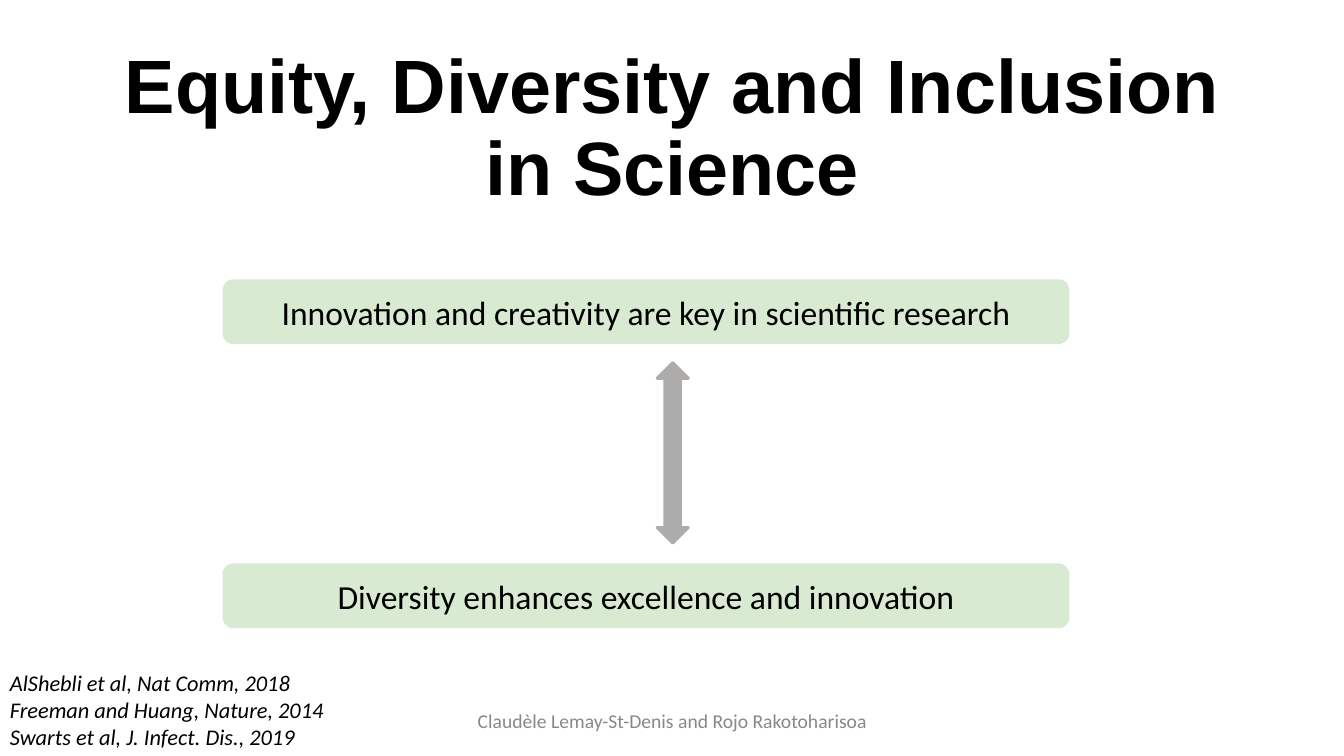
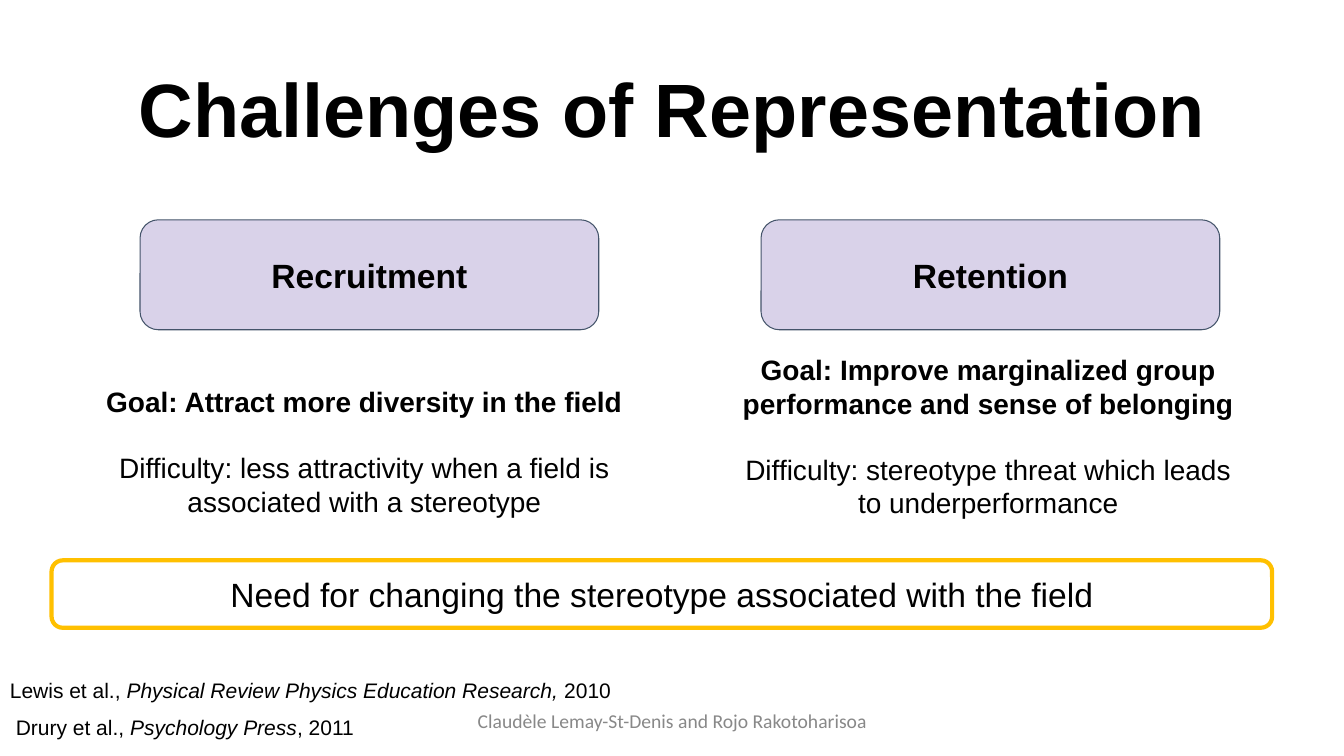
from dataclasses import dataclass, replace

from pptx import Presentation
from pptx.dml.color import RGBColor
from pptx.enum.shapes import MSO_SHAPE as Preset
from pptx.enum.text import MSO_ANCHOR as Anchor, MSO_AUTO_SIZE as AutoSize, PP_ALIGN as Align
from pptx.util import Cm, Pt


@dataclass(frozen=True)
class Style:
    size: float
    font: str = "Arial"
    color: str = "000000"
    bold: bool = False
    italic: bool = False
    align: Align = Align.CENTER
    spacing: float = 1.0
    gap: float = 0


@dataclass(frozen=True)
class Theme:
    green: str = "D9EAD3"
    lilac: str = "D9D2E9"
    slate: str = "44546A"
    amber: str = "FFC000"
    grey: str = "AEABAB"
    title: Style = Style(54, bold=True, spacing=0.9)
    statement: Style = Style(24, "Calibri")
    heading: Style = Style(24, bold=True)
    body: Style = Style(20, gap=23)
    conclusion: Style = Style(24)
    footer: Style = Style(14, "Calibri", "888888")
    citation: Style = Style(16, "Calibri", italic=True, align=Align.LEFT)
    reference: Style = Style(15, align=Align.LEFT, spacing=0.9, gap=10)


THEME = Theme()
FOOTER = "Claudèle Lemay-St-Denis and Rojo Rakotoharisoa"


def rgb(value):
    return RGBColor.from_string(value)


def format_para(para, style, first):
    para.alignment = style.align
    para.line_spacing = style.spacing
    para.space_before = Pt(0 if first else style.gap)
    font = para.font
    font.size, font.name = Pt(style.size), style.font
    font.bold, font.italic = style.bold, style.italic
    font.color.rgb = rgb(style.color)


def prepare_frame(frame, anchor, inset):
    frame.word_wrap = True
    frame.auto_size = AutoSize.NONE
    frame.vertical_anchor = anchor
    frame.margin_left = frame.margin_right = Cm(0.25)
    frame.margin_top = frame.margin_bottom = Cm(inset)


def write(frame, lines, style, anchor=Anchor.MIDDLE, inset=0.13):
    prepare_frame(frame, anchor, inset)
    for index, line in enumerate(lines):
        para = frame.paragraphs[0] if index == 0 else frame.add_paragraph()
        format_para(para, style, index == 0)
        para.add_run().text = line


def add_titled_page(deck, lines, left, top, width, height):
    page = deck.slides.add_slide(deck.slide_layouts[5])
    title = page.shapes.title
    title.left, title.top, title.width, title.height = map(Cm, (left, top, width, height))
    write(title.text_frame, lines, THEME.title)
    add_text(page, (11.23, 17.65, 11.43, 1.02), [FOOTER], THEME.footer, Anchor.MIDDLE)
    return page


def add_text(page, area, lines, style, anchor=Anchor.TOP, inset=0.13):
    box = page.shapes.add_textbox(*map(Cm, area))
    write(box.text_frame, lines, style, anchor, inset)
    return box


def add_figure(page, preset, area, fill=None, line=None, weight=0):
    shape = page.shapes.add_shape(preset, *map(Cm, area))
    shape.shadow.inherit = False
    if fill:
        shape.fill.solid()
        shape.fill.fore_color.rgb = rgb(fill)
    else:
        shape.fill.background()
    if line:
        shape.line.color.rgb = rgb(line)
        shape.line.width = Pt(weight)
    else:
        shape.line.fill.background()
    return shape


def add_panel(page, area, text, style, **paint):
    panel = add_figure(page, Preset.ROUNDED_RECTANGLE, area, **paint)
    write(panel.text_frame, [text], style)


def add_goal(page, area, goal, difficulty):
    box = add_text(page, area, [goal, difficulty], THEME.body, inset=0.25)
    box.text_frame.paragraphs[0].font.bold = True
    box.text_frame.paragraphs[1].space_before = Pt(THEME.body.size + THEME.body.gap - 20)


def add_references(page, area, references):
    frame = page.shapes.add_textbox(*map(Cm, area)).text_frame
    prepare_frame(frame, Anchor.TOP, 0.25)
    for index, (authors, journal, year, indent) in enumerate(references):
        para = frame.paragraphs[0] if index == 0 else frame.add_paragraph()
        para._p.get_or_add_pPr().set("marL", str(Cm(indent)))
        format_para(para, THEME.reference, index == 0)
        for text, italic in ((authors, False), (journal, True), (year, False)):
            span = para.add_run()
            span.text = text
            if italic:
                span.font.italic = True


def build_inclusion(deck):
    page = add_titled_page(
        deck, ["Equity, Diversity and Inclusion", "in Science"], 2.36, 1.02, 29.16, 4.52)
    add_text(page, (0, 16.74, 16.15, 2.31), [
        "AlShebli et al, Nat Comm, 2018",
        "Freeman and Huang, Nature, 2014",
        "Swarts et al, J. Infect. Dis., 2019",
    ], THEME.citation)
    statements = (
        (7.04, "Innovation and creativity are key in scientific research"),
        (14.2, "Diversity enhances excellence and innovation"),
    )
    for top, text in statements:
        add_panel(page, (5.61, top, 21.34, 1.63), text, THEME.statement, fill=THEME.green)
    arrow = add_figure(page, Preset.UP_DOWN_ARROW, (16.56, 9.14, 0.79, 4.55),
                       THEME.grey, THEME.grey, 2)
    arrow.adjustments[0] = 0.31


def build_challenges(deck):
    page = add_titled_page(deck, ["Challenges of Representation"], 2.34, 1.02, 29.21, 3.68)
    for left, heading in ((3.53, "Recruitment"), (19.18, "Retention")):
        add_panel(page, (left, 5.54, 11.56, 2.77), heading, THEME.heading,
                  fill=THEME.lilac, line=THEME.slate, weight=0.75)
    add_goal(page, (1.3, 9.45, 15.77, 3.94),
             "Goal: Attract more diversity in the field",
             "Difficulty: less attractivity when a field is associated with a stereotype")
    add_goal(page, (18.29, 8.64, 13.23, 4.78),
             "Goal: Improve marginalized group performance and sense of belonging",
             "Difficulty: stereotype threat which leads to underperformance")
    add_panel(page, (1.3, 14.12, 30.76, 1.7),
              "Need for changing the stereotype associated with the field",
              THEME.conclusion, line=THEME.amber, weight=3)
    add_references(page, (0, 16.89, 17.02, 2.16), (
        ("Lewis et al., ", "Physical Review Physics Education Research, ", "2010", 0),
        ("Drury et al., ", "Psychology Press", ", 2011", 0.15),
    ))


def main():
    deck = Presentation()
    deck.slide_width, deck.slide_height = Cm(33.87), Cm(19.05)
    build_inclusion(deck)
    build_challenges(deck)
    deck.save("out.pptx")


if __name__ == "__main__":
    main()
